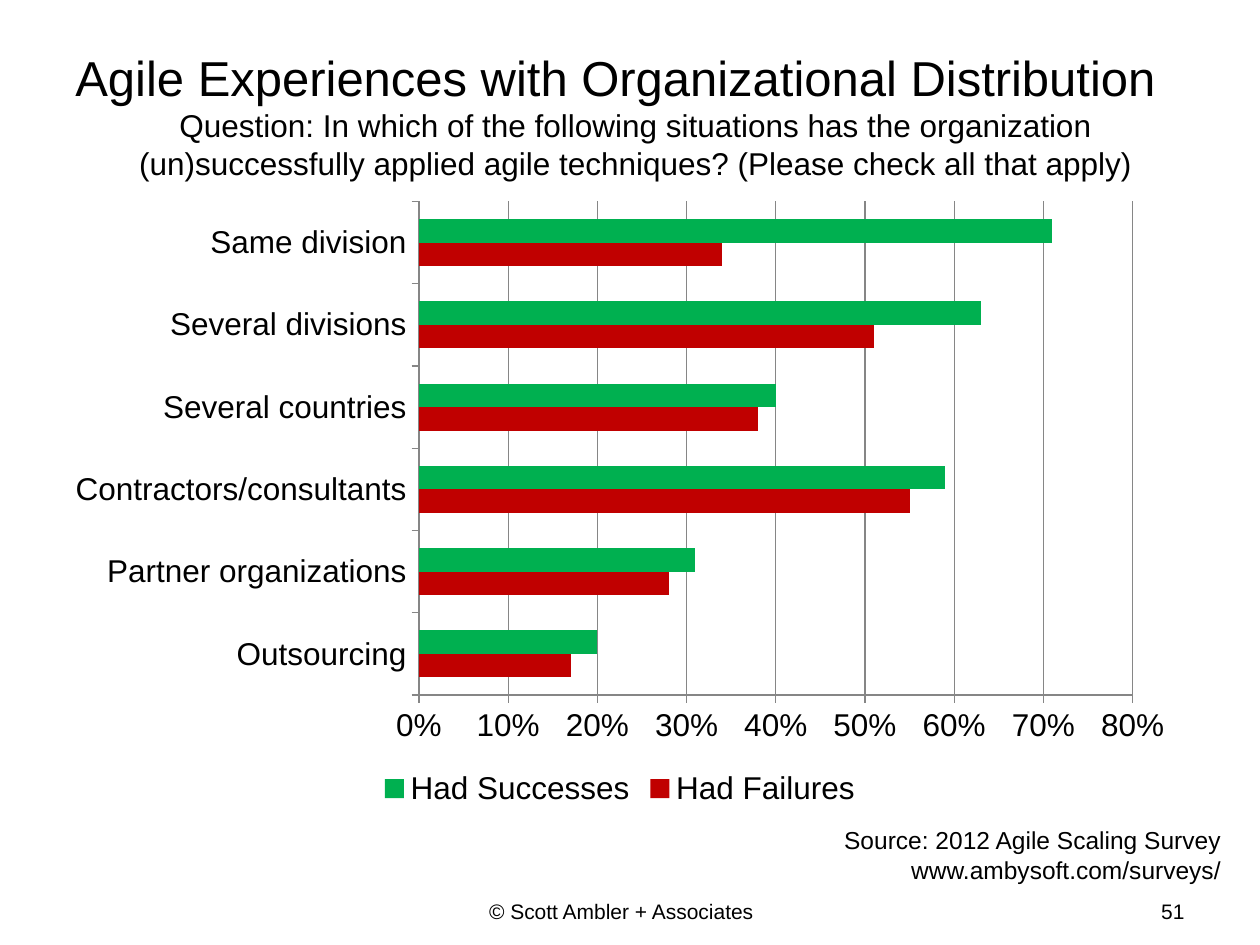
"""Build the slide on agile experiences with organizational distribution."""
import pptx
import pptx.chart.data
import pptx.dml.color
import pptx.enum.chart
import pptx.enum.text
import pptx.util

Inches = pptx.util.Inches
Pt = pptx.util.Pt
RGBColor = pptx.dml.color.RGBColor
Align = pptx.enum.text.PP_ALIGN
Anchor = pptx.enum.text.MSO_ANCHOR

BLACK = RGBColor(0x00, 0x00, 0x00)
GRAY = RGBColor(0x86, 0x86, 0x86)
GREEN = RGBColor(0x00, 0xB0, 0x50)
RED = RGBColor(0xC0, 0x00, 0x00)
FONT = "Arial"


def add_text(slide, text, left, top, width, height, size=12,
             align=Align.RIGHT, anchor=Anchor.TOP, wrap=True):
    box = slide.shapes.add_textbox(Inches(left), Inches(top), Inches(width), Inches(height))
    frame = box.text_frame
    frame.word_wrap = wrap
    frame.vertical_anchor = anchor
    frame.text = text
    for paragraph in frame.paragraphs:
        paragraph.alignment = align
        paragraph.font.size = Pt(size)
        paragraph.font.name = FONT
        paragraph.font.color.rgb = BLACK


presentation = pptx.Presentation()
presentation.slide_width = Inches(10)
presentation.slide_height = Inches(7.5)
slide = presentation.slides.add_slide(presentation.slide_layouts[6])

add_text(slide, "Agile Experiences with Organizational Distribution",
         0.5, 0.3, 9, 0.62, size=28, align=Align.LEFT, anchor=Anchor.MIDDLE)

survey = pptx.chart.data.CategoryChartData(number_format="0%")
survey.categories = ["Outsourcing", "Partner organizations", "Contractors/consultants",
                     "Several countries", "Several divisions", "Same division"]
survey.add_series("Had Failures", [0.17, 0.28, 0.55, 0.38, 0.51, 0.34])
survey.add_series("Had Successes", [0.2, 0.31, 0.59, 0.4, 0.63, 0.71])
experiences = slide.shapes.add_chart(
    pptx.enum.chart.XL_CHART_TYPE.BAR_CLUSTERED,
    Inches(0.42), Inches(1.5), Inches(9), Inches(4.95), survey).chart
experiences.has_title = False
experiences.font.size = Pt(18)
experiences.font.name = FONT
experiences.font.color.rgb = BLACK

experiences.has_legend = True
experiences.legend.position = pptx.enum.chart.XL_LEGEND_POSITION.BOTTOM
experiences.legend.include_in_layout = False

bars = experiences.plots[0]
bars.gap_width = 150
bars.overlap = 0
bars.vary_by_categories = False
for series, color in zip(bars.series, (RED, GREEN)):
    series.format.fill.solid()
    series.format.fill.fore_color.rgb = color

situations = experiences.category_axis
shares = experiences.value_axis
shares.minimum_scale = 0
shares.maximum_scale = 0.8
shares.major_unit = 0.1
shares.has_major_gridlines = True
shares.tick_labels.number_format = "0%"
shares.tick_labels.number_format_is_linked = False
for axis in (situations, shares):
    axis.major_tick_mark = pptx.enum.chart.XL_TICK_MARK.OUTSIDE
for line in (situations.format.line, shares.format.line, shares.major_gridlines.format.line):
    line.color.rgb = GRAY
    line.width = Pt(0.75)

add_text(slide, "© Scott Ambler + Associates", 1.08, 7.08, 5, 0.27)
add_text(slide, "Question: In which of the following situations has the organization "
         "(un)successfully applied agile techniques? (Please check all that apply)",
         0.83, 0.79, 8.43, 0.71, size=18, align=Align.CENTER)
add_text(slide, "51", 8.5, 7.08, 1, 0.27)
add_text(slide, "Source: 2012 Agile Scaling Survey\nwww.ambysoft.com/surveys/",
         6.58, 6.5, 3.21, 0.57, size=14, wrap=False)

presentation.save("out.pptx")
